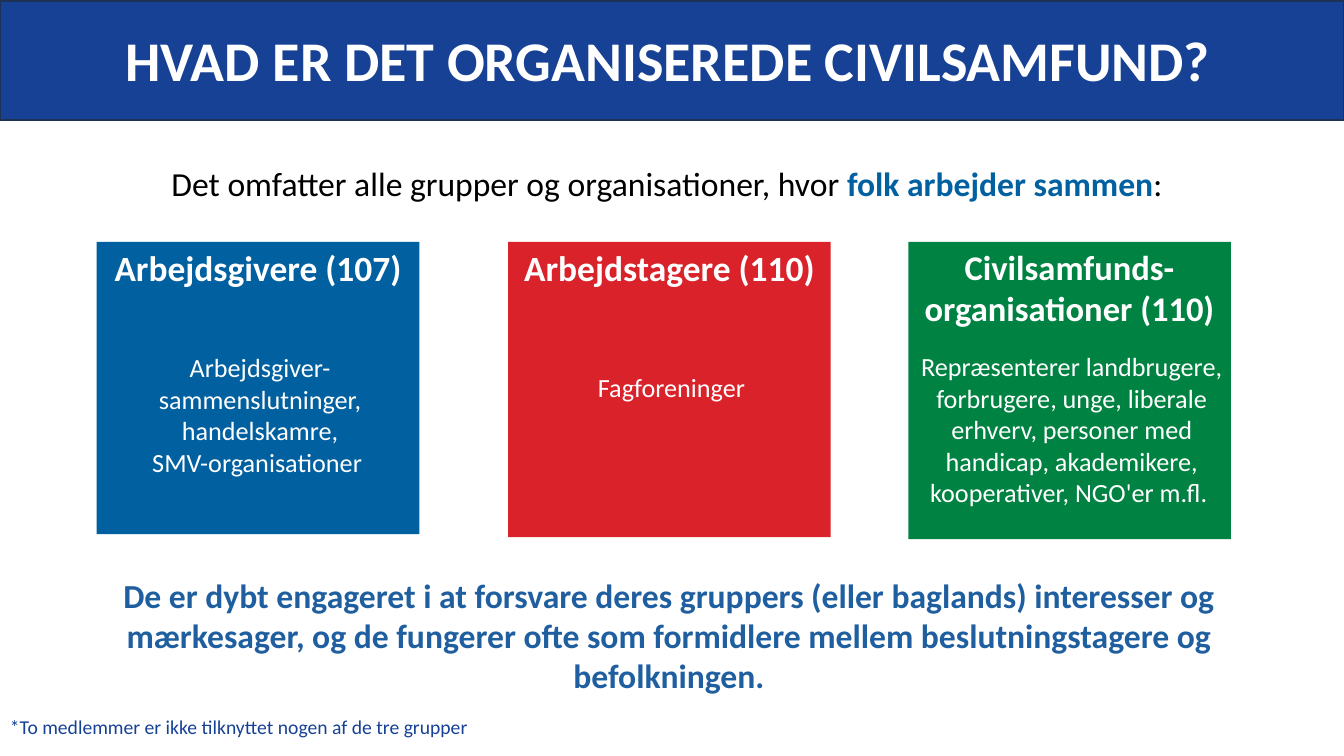
from pptx import Presentation
from pptx.dml.color import RGBColor
from pptx.enum.shapes import MSO_SHAPE as Shape
from pptx.enum.text import MSO_ANCHOR as Anchor, MSO_AUTO_SIZE as Fit, PP_ALIGN as Align
from pptx.util import Inches, Pt

WIDE, HIGH = 13.33, 7.5
BLUE, WHITE = "174195", "FFFFFF"


def color(code):
    return RGBColor.from_string(code)


def write(box, area, lines, size, align=Align.CENTER, inset=(0.1, 0.05)):
    """Place a text shape; each line is a list of (text, colour, bold) runs."""
    box.left, box.top, box.width, box.height = map(Inches, area)
    frame = box.text_frame
    side, edge = map(Inches, inset)
    form = dict(word_wrap=True, auto_size=Fit.NONE, vertical_anchor=Anchor.TOP,
                margin_left=side, margin_right=side, margin_top=edge, margin_bottom=edge)
    for name, value in form.items():
        setattr(frame, name, value)
    for i, line in enumerate(lines):
        para = frame.add_paragraph() if i else frame.paragraphs[0]
        para.alignment = align
        for text, code, bold in line:
            run = para.add_run()
            run.text = text
            for name, value in dict(name="Calibri", size=Pt(size), bold=bold).items():
                setattr(run.font, name, value)
            run.font.color.rgb = color(code)


deck = Presentation()
deck.slide_width, deck.slide_height = Inches(WIDE), Inches(HIGH)
slide = deck.slides.add_slide(deck.slide_layouts[1])
shapes = slide.shapes
title, intro = shapes.title, slide.placeholders[1]

# Title on its band
band = shapes.add_shape(Shape.RECTANGLE, 0, Inches(0.01), Inches(WIDE), Inches(1.18))
band.shadow.inherit = False
band.fill.solid()
band.fill.fore_color.rgb = color(BLUE)
band.line.color.rgb = color("1E3256")
band.line.width = Pt(1)
title._element.addprevious(band._element)
write(title, (-0.09, 0.2, 13.43, 0.98),
      [[("HVAD ER DET ORGANISEREDE CIVILSAMFUND?", WHITE, True)]], 40)

# Introduction
write(intro, (-0.05, 1.61, WIDE, 0.57),
      [[("Det omfatter alle grupper og organisationer, hvor ", "000000", False),
        ("folk arbejder sammen", "0060A0", True), (":", "000000", False)]], 24)
para = intro.text_frame.paragraphs[0]
para.line_spacing, para.space_before = 0.9, Pt(5)
props = para._p.get_or_add_pPr()
props.set("marL", "0")
props.set("indent", "0")
bullet = props.makeelement(
    "{http://schemas.openxmlformats.org/drawingml/2006/main}buNone", {})
props.append(bullet)

# Three groups: left, height, fill, heading, heading size, text top, text lines
top, wide = 2.4, 3.2
groups = [
    (0.96, 2.9, "0060A0", "Arbejdsgivere (107)", 25.3, 3.44,
     ["Arbejdsgiver-sammenslutninger,", "handelskamre,", "SMV-organisationer "]),
    (5.04, 2.93, "D9222A", "Arbejdstagere (110)", 25.3, 3.63, ["Fagforeninger"]),
    (9.01, 2.95, "008342", "Civilsamfunds-organisationer (110)", 24.7, 3.43,
     ["Repræsenterer landbrugere, forbrugere, unge, liberale erhverv, personer med "
      "handicap, akademikere, kooperativer, NGO'er m.fl. "]),
]
for left, high, fill, head, size, low, lines in groups:
    card = shapes.add_shape(Shape.RECTANGLE, *map(Inches, (left, top, wide, high)))
    card.shadow.inherit = False
    card.fill.solid()
    card.fill.fore_color.rgb = color(fill)
    card.line.fill.background()
    write(shapes.add_textbox(0, 0, 0, 0), (left, top - 0.01, wide, 0.86),
          [[(head, WHITE, True)]], size)
    write(shapes.add_textbox(0, 0, 0, 0), (left, low, wide + 0.04, top + high - low),
          [[(line, WHITE, False)] for line in lines], 18.7)

# Conclusion and footnote
write(shapes.add_textbox(0, 0, 0, 0), (0.35, 5.63, 12.57, 1.59),
      [[("De er dybt engageret i at forsvare deres gruppers (eller baglands) interesser og "
         "mærkesager, og de fungerer ofte som formidlere mellem beslutningstagere og "
         "befolkningen.", "1F5FA0", True)]], 24, inset=(0.13, 0.07))
write(shapes.add_textbox(0, 0, 0, 0), (0, 7.04, 9.34, 0.34),
      [[("*To medlemmer er ikke tilknyttet nogen af de tre grupper", BLUE, False)]],
      14, Align.LEFT)

deck.save("out.pptx")
